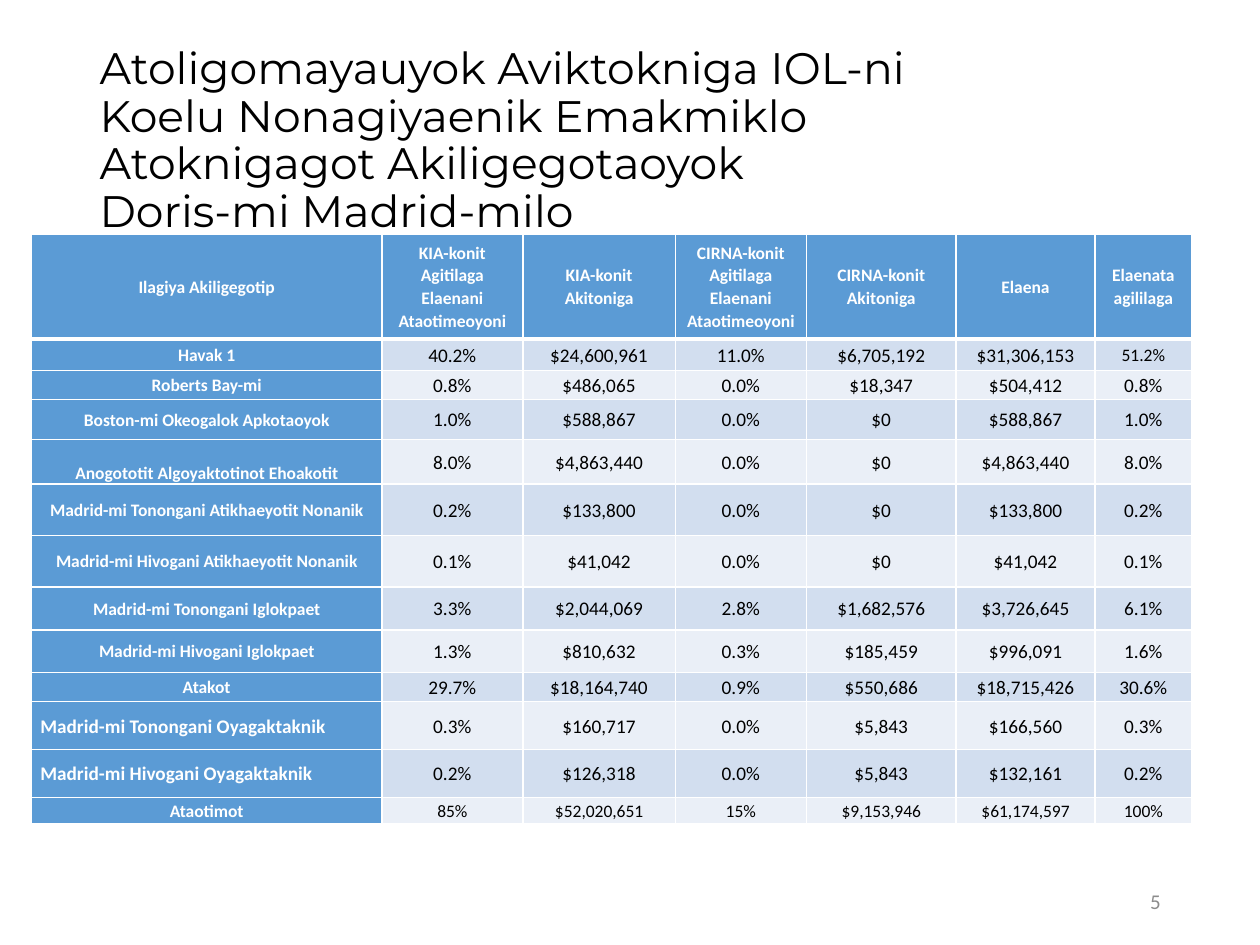
import pptx
import pptx.dml.color
import pptx.enum.text
import pptx.oxml
import pptx.oxml.ns
import pptx.util

Inches = pptx.util.Inches
Pt = pptx.util.Pt
ALIGN = pptx.enum.text.PP_ALIGN
MIDDLE = pptx.enum.text.MSO_ANCHOR.MIDDLE

WHITE, BLACK, GRAY, BLUE = "FFFFFF", "000000", "8C8C8C", "5B9BD5"
BANDS = ["D2DEEF", "EAEFF7"]

COLUMN_WIDTHS = [2.78, 1.12, 1.21, 1.04, 1.19, 1.1, 0.77]
ROW_HEIGHTS = [0.83, 0.25, 0.23, 0.32, 0.35, 0.41, 0.41, 0.34, 0.34, 0.23, 0.38, 0.38, 0.21]
ROWS = [
    ["Ilagiya Akiligegotip", "KIA-konit Agitilaga Elaenani Ataotimeoyoni", "KIA-konit Akitoniga",
     "CIRNA-konit Agitilaga Elaenani Ataotimeoyoni", "CIRNA-konit Akitoniga", "Elaena",
     "Elaenata agililaga"],
    ["Havak 1", "40.2%", "$24,600,961", "11.0%", "$6,705,192", "$31,306,153", "51.2%"],
    ["Roberts Bay-mi", "0.8%", "$486,065", "0.0%", "$18,347", "$504,412", "0.8%"],
    ["Boston-mi Okeogalok Apkotaoyok", "1.0%", "$588,867", "0.0%", "$0", "$588,867", "1.0%"],
    ["Anogototit Algoyaktotinot Ehoakotit", "8.0%", "$4,863,440", "0.0%", "$0", "$4,863,440", "8.0%"],
    ["Madrid-mi Tonongani Atikhaeyotit Nonanik", "0.2%", "$133,800", "0.0%", "$0", "$133,800", "0.2%"],
    ["Madrid-mi Hivogani Atikhaeyotit Nonanik", "0.1%", "$41,042", "0.0%", "$0", "$41,042", "0.1%"],
    ["Madrid-mi Tonongani Iglokpaet", "3.3%", "$2,044,069", "2.8%", "$1,682,576", "$3,726,645", "6.1%"],
    ["Madrid-mi Hivogani Iglokpaet", "1.3%", "$810,632", "0.3%", "$185,459", "$996,091", "1.6%"],
    ["Atakot", "29.7%", "$18,164,740", "0.9%", "$550,686", "$18,715,426", "30.6%"],
    ["Madrid-mi Tonongani Oyagaktaknik", "0.3%", "$160,717", "0.0%", "$5,843", "$166,560", "0.3%"],
    ["Madrid-mi Hivogani Oyagaktaknik", "0.2%", "$126,318", "0.0%", "$5,843", "$132,161", "0.2%"],
    ["Ataotimot", "85%", "$52,020,651", "15%", "$9,153,946", "$61,174,597", "100%"],
]
TOTAL_ROW = len(ROWS) - 1
LEFT_LABEL_ROWS = (10, 11)
LOW_LABEL_ROW = 4
SMALL_VALUE = (1, 6)


def rgb(color):
    return pptx.dml.color.RGBColor.from_string(color)


def write(frame, text, size, font, color, align=ALIGN.LEFT, spacing=1.0, bold=False):
    frame.text = text
    for para in frame.paragraphs:
        para.alignment = align
        para.line_spacing = spacing
        for span in para.runs:
            span.font.size = Pt(size)
            span.font.name = font
            span.font.bold = bold
            span.font.color.rgb = rgb(color)


def add_title(page):
    title = page.shapes.title
    title.left, title.top = Inches(0.69), Inches(0.4)
    title.width, title.height = Inches(7.22), Inches(1.45)
    frame = title.text_frame
    frame.word_wrap = True
    frame.auto_size = pptx.enum.text.MSO_AUTO_SIZE.NONE
    frame.vertical_anchor = MIDDLE
    write(frame, "Atoligomayauyok Aviktokniga IOL-ni Koelu Nonagiyaenik Emakmiklo "
          "Atoknigagot Akiligegotaoyok\vDoris-mi Madrid-milo", 25.2, "Montserrat", BLACK, spacing=0.9)


def add_page_number(page):
    box = page.shapes.add_textbox(Inches(7.06), Inches(6.95), Inches(2.25), Inches(0.4))
    box.text_frame.word_wrap = True
    box.text_frame.vertical_anchor = MIDDLE
    write(box.text_frame, "5", 12, "Calibri", GRAY, ALIGN.RIGHT)


def add_border(cell, side, points):
    properties = cell._tc.get_or_add_tcPr()
    properties.append(pptx.oxml.parse_xml(
        f'<a:{side} {pptx.oxml.ns.nsdecls("a")} w="{Pt(points)}">'
        f'<a:solidFill><a:srgbClr val="{WHITE}"/></a:solidFill></a:{side}>'))


def style_cell(cell, row, column):
    is_label = row == 0 or column == 0
    for side in ("lnL", "lnR", "lnT", "lnB"):
        under_header = (row, side) in ((0, "lnB"), (1, "lnT"))
        add_border(cell, side, 3 if under_header else 1)
    cell.fill.solid()
    cell.fill.fore_color.rgb = rgb(BLUE if is_label else BANDS[(row - 1) % 2])
    cell.vertical_anchor = MIDDLE
    cell.margin_left = cell.margin_right = Inches(0.07)
    is_low = (row, column) == (LOW_LABEL_ROW, 0)
    cell.margin_top = Inches(0.17 if is_low else 0)
    cell.margin_bottom = 0
    is_left = column == 0 and row in LEFT_LABEL_ROWS
    is_small = (is_label and not is_left) or row == TOTAL_ROW or (row, column) == SMALL_VALUE
    write(cell.text_frame, ROWS[row][column], 10 if is_small else 11, "Calibri",
          WHITE if is_label else BLACK, ALIGN.LEFT if is_left else ALIGN.CENTER, 1.07, is_label)


def add_cost_table(page):
    frame = page.shapes.add_table(len(ROWS), len(COLUMN_WIDTHS), Inches(0.25), Inches(1.86),
                                  Inches(sum(COLUMN_WIDTHS)), Inches(sum(ROW_HEIGHTS)))
    table = frame.table
    table.horz_banding = False
    for column, width in zip(table.columns, COLUMN_WIDTHS):
        column.width = Inches(width)
    for row, height in zip(table.rows, ROW_HEIGHTS):
        row.height = Inches(height)
    for row in range(len(ROWS)):
        for column in range(len(COLUMN_WIDTHS)):
            style_cell(table.cell(row, column), row, column)


def main():
    deck = pptx.Presentation()
    deck.slide_width, deck.slide_height = Inches(10), Inches(7.5)
    page = deck.slides.add_slide(deck.slide_layouts[5])
    add_title(page)
    add_page_number(page)
    add_cost_table(page)
    deck.save("out.pptx")


if __name__ == "__main__":
    main()
